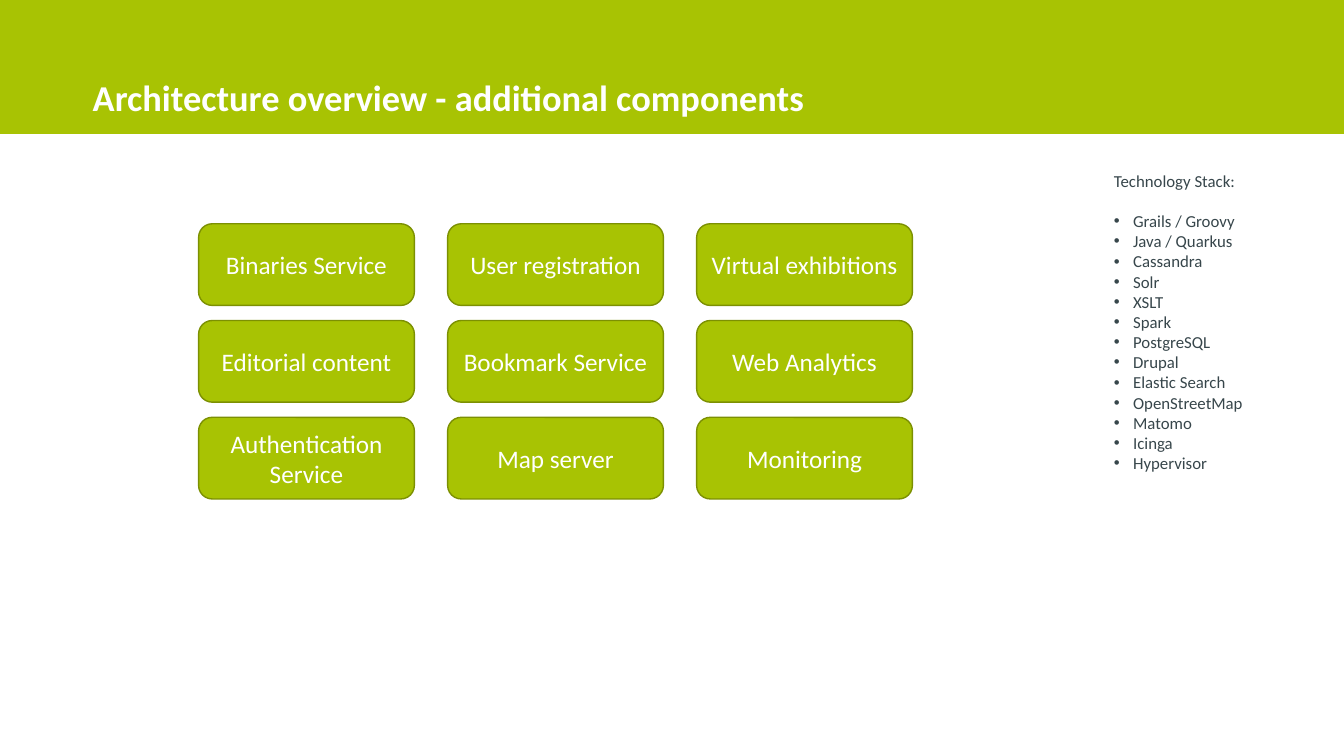
from dataclasses import dataclass

from lxml.etree import SubElement
from pptx import Presentation
from pptx.dml.color import RGBColor
from pptx.enum.shapes import MSO_SHAPE
from pptx.enum.text import MSO_ANCHOR, MSO_AUTO_SIZE, PP_ALIGN
from pptx.oxml.ns import qn
from pptx.util import Inches, Pt


@dataclass(frozen=True)
class Theme:
    font: str = "Calibri"
    green: RGBColor = RGBColor(0xA8, 0xC3, 0x03)
    outline: RGBColor = RGBColor(0x7C, 0x90, 0x02)
    white: RGBColor = RGBColor(0xFF, 0xFF, 0xFF)
    ink: RGBColor = RGBColor(0x37, 0x46, 0x4B)
    title_size: int = 26
    component_size: int = 18
    stack_size: int = 12


THEME = Theme()

COMPONENTS = [
    ["Binaries Service", "User registration", "Virtual exhibitions"],
    ["Editorial content", "Bookmark Service", "Web Analytics"],
    ["Authentication Service", "Map server", "Monitoring"],
]

TECHNOLOGIES = [
    "Grails / Groovy", "Java / Quarkus", "Cassandra", "Solr", "XSLT", "Spark",
    "PostgreSQL", "Drupal", "Elastic Search", "OpenStreetMap", "Matomo",
    "Icinga", "Hypervisor",
]


def add_run(paragraph, text, size, color, bold=False):
    run = paragraph.add_run()
    run.text = text
    run.font.name = THEME.font
    run.font.size = Pt(size)
    run.font.color.rgb = color
    run.font.bold = bold


def add_bullet(paragraph, indent):
    properties = paragraph._p.get_or_add_pPr()
    properties.set("marL", str(Inches(indent)))
    properties.set("indent", str(Inches(-indent)))
    SubElement(properties, qn("a:buFont"), typeface="Arial")
    SubElement(properties, qn("a:buChar"), char="•")


def add_header(slide, left, top, width, height):
    band = slide.shapes.add_shape(
        MSO_SHAPE.RECTANGLE, Inches(left), Inches(top), Inches(width), Inches(height))
    band.shadow.inherit = False
    band.fill.solid()
    band.fill.fore_color.rgb = THEME.green
    band.line.fill.background()

    title = slide.shapes.add_textbox(
        Inches(left + 0.92), Inches(top + 0.23), Inches(width - 1.83), Inches(height - 0.34))
    frame = title.text_frame
    frame.word_wrap = True
    frame.vertical_anchor = MSO_ANCHOR.BOTTOM
    frame.margin_left = frame.margin_right = 0
    frame.margin_top = frame.margin_bottom = Inches(0.04)
    heading = frame.paragraphs[0]
    heading.line_spacing = Pt(24)
    add_run(heading, "Architecture overview - additional components",
            THEME.title_size, THEME.white, bold=True)


def add_component(slide, label, left, top, width, height):
    component = slide.shapes.add_shape(
        MSO_SHAPE.ROUNDED_RECTANGLE, Inches(left), Inches(top), Inches(width), Inches(height))
    component.shadow.inherit = False
    component.fill.solid()
    component.fill.fore_color.rgb = THEME.green
    component.line.color.rgb = THEME.outline
    component.line.width = Pt(1)
    frame = component.text_frame
    frame.word_wrap = True
    frame.vertical_anchor = MSO_ANCHOR.MIDDLE
    caption = frame.paragraphs[0]
    caption.alignment = PP_ALIGN.CENTER
    add_run(caption, label, THEME.component_size, THEME.white)


def add_component_grid(slide, left, top, width, height):
    component_width, component_height = 2.14, 0.81
    column_step = (width - component_width) / (len(COMPONENTS[0]) - 1)
    row_step = (height - component_height) / (len(COMPONENTS) - 1)
    for row, labels in enumerate(COMPONENTS):
        for column, label in enumerate(labels):
            add_component(slide, label, left + column * column_step, top + row * row_step,
                          component_width, component_height)


def add_technology_stack(slide, left, top, width, height):
    stack = slide.shapes.add_textbox(
        Inches(left), Inches(top), Inches(width), Inches(height))
    frame = stack.text_frame
    frame.word_wrap = True
    frame.auto_size = MSO_AUTO_SIZE.SHAPE_TO_FIT_TEXT
    heading = frame.paragraphs[0]
    heading.space_after = Pt(14.6)
    add_run(heading, "Technology Stack:", THEME.stack_size, THEME.ink)
    for technology in TECHNOLOGIES:
        entry = frame.add_paragraph()
        add_bullet(entry, 0.19)
        add_run(entry, technology, THEME.stack_size, THEME.ink)


def main():
    presentation = Presentation()
    presentation.slide_width = Inches(13.33)
    presentation.slide_height = Inches(7.5)
    slide = presentation.slides.add_slide(presentation.slide_layouts[6])
    add_header(slide, 0, 0, 13.33, 1.33)
    add_technology_stack(slide, 10.95, 1.64, 2.12, 3.13)
    add_component_grid(slide, 1.97, 2.22, 7.08, 2.73)
    presentation.save("out.pptx")


if __name__ == "__main__":
    main()
